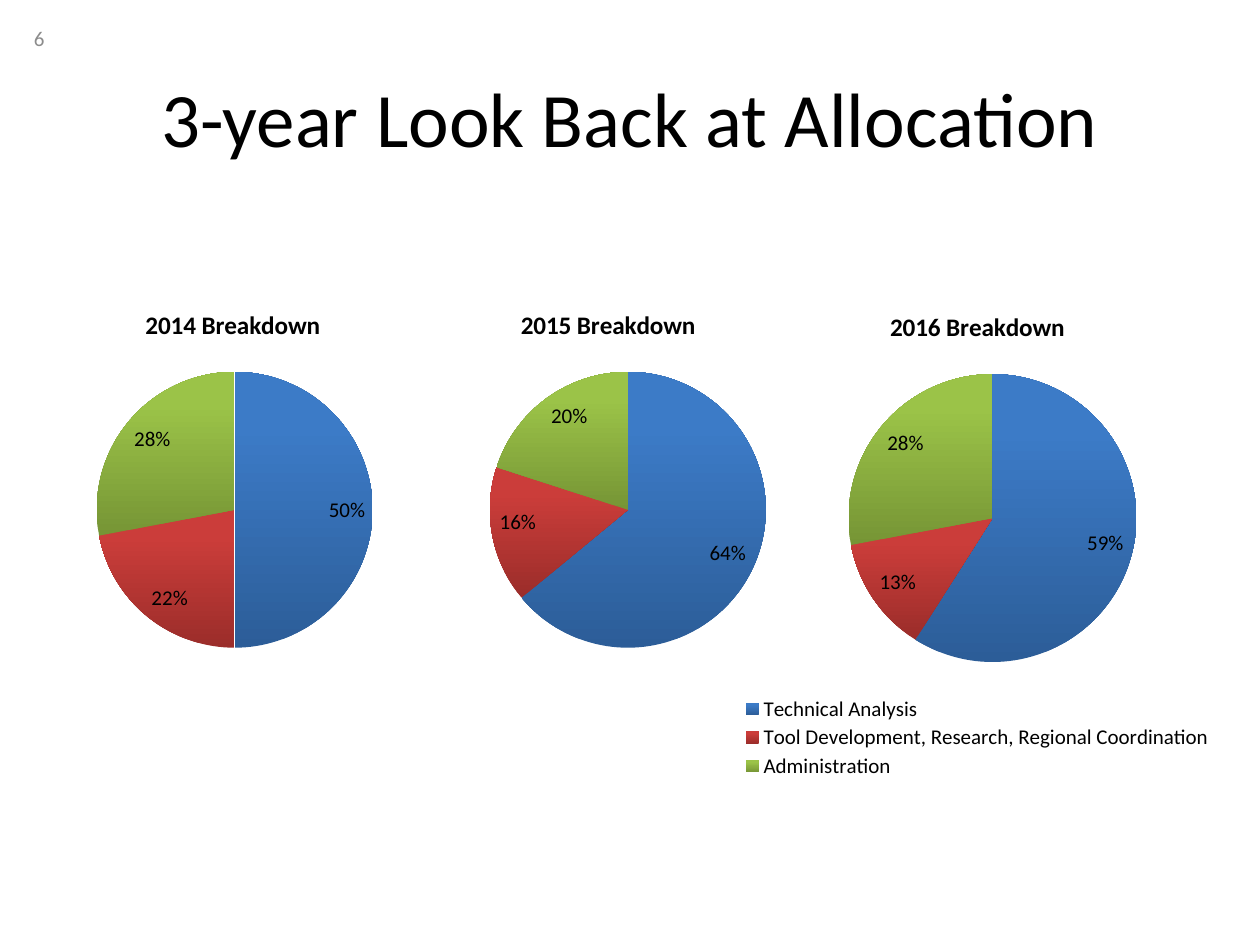
import pptx
import pptx.chart.data
import pptx.dml.color
import pptx.enum.chart
import pptx.enum.text
import pptx.oxml
import pptx.oxml.ns
import pptx.util

Pt = pptx.util.Pt
FONT = "Calibri"
# Slice gradients: bottom colour, top colour
SLICES = [("2C5D98", "3C7BC7"), ("9B2D2A", "CB3D3A"), ("769535", "9BC348")]
CATEGORIES = [
    "Technical Analysis",
    "Tool Development, Research, Regional Coordination",
    "Administration",
]
NUMBERS = ["1", "2", "3"]


def rgb(value):
    return pptx.dml.color.RGBColor.from_string(value)


def set_font(font, size, color="000000", bold=False):
    font.name = FONT
    font.size = Pt(size)
    font.bold = bold
    font.color.rgb = rgb(color)


def place(sp, box):
    sp.left, sp.top, sp.width, sp.height = [Pt(v) for v in box]


def set_text(sp, text, size, color, align):
    tf = sp.text_frame
    tf.word_wrap = True
    tf.vertical_anchor = pptx.enum.text.MSO_ANCHOR.MIDDLE
    p = tf.paragraphs[0]
    p.text = text
    p.alignment = align
    set_font(p.font, size, color)


def set_layout(parent, index, box, target=""):
    """Fix the place of a chart part, as fractions of the chart's frame."""
    for old in parent.findall(pptx.oxml.ns.qn("c:layout")):
        parent.remove(old)
    sizes = "".join(f'<c:{k} val="{v}"/>' for k, v in zip("xywh", box))
    parent.insert(index, pptx.oxml.parse_xml(
        f'<c:layout {pptx.oxml.ns.nsdecls("c")}><c:manualLayout>{target}'
        f'<c:xMode val="edge"/><c:yMode val="edge"/>{sizes}'
        '</c:manualLayout></c:layout>'))


def add_pie(slide, title, values, box, plot_box, categories=NUMBERS):
    data = pptx.chart.data.CategoryChartData(number_format="0%")
    data.categories = categories
    data.add_series("Series 1", values)
    chart = slide.shapes.add_chart(
        pptx.enum.chart.XL_CHART_TYPE.PIE, *[Pt(v) for v in box], data).chart
    set_font(chart.font, 12)
    chart.has_legend = False

    # Title
    chart.has_title = True
    p = chart.chart_title.text_frame.paragraphs[0]
    p.text = title
    set_font(p.font, 14.4, bold=True)
    chart.chart_title.include_in_layout = False

    # Slices
    plot = chart.plots[0]
    plot.vary_by_categories = True
    for i, colors in enumerate(SLICES):
        fill = plot.series[0].points[i].format.fill
        fill.gradient()
        fill.gradient_angle = 90
        for stop, color, position in zip(fill.gradient_stops, colors, (0, 0.8)):
            stop.color.rgb = rgb(color)
            stop.position = position

    # Value labels
    plot.has_data_labels = True
    labels = plot.data_labels
    labels.show_value = True
    labels.show_percentage = False
    labels.number_format = "0%"
    labels.number_format_is_linked = False
    labels.position = pptx.enum.chart.XL_LABEL_POSITION.INSIDE_END
    set_font(labels.font, 12)

    plot_area = chart.element.find(".//" + pptx.oxml.ns.qn("c:plotArea"))
    set_layout(plot_area, 0, plot_box, '<c:layoutTarget val="inner"/>')
    return chart


def add_legend(chart, box):
    chart.has_legend = True
    legend = chart.legend
    legend.position = pptx.enum.chart.XL_LEGEND_POSITION.BOTTOM
    legend.include_in_layout = False
    set_font(legend.font, 12)
    element = chart.element.find(".//" + pptx.oxml.ns.qn("c:legend"))
    set_layout(element, 1, box)


def main():
    prs = pptx.Presentation()
    prs.slide_width, prs.slide_height = Pt(720), Pt(540)
    slide = prs.slides.add_slide(prs.slide_layouts[5])

    # Title and slide number
    title = slide.shapes.title
    place(title, (36, 21.6, 648, 90))
    set_text(title, "3-year Look Back at Allocation", 44, "000000",
             pptx.enum.text.PP_ALIGN.CENTER)
    number = slide.shapes.add_textbox(Pt(12.24), Pt(7.2), Pt(168), Pt(28.8))
    set_text(number, "6", 12, "8C8C8C", pptx.enum.text.PP_ALIGN.LEFT)

    # Yearly pies; the last year carries the shared legend
    top = 165
    add_pie(slide, "2015 Breakdown", (0.64, 0.16, 0.2),
            (222, top, 251, 216), (0.23, 0.22, 0.63, 0.73))
    latest = add_pie(slide, "2016 Breakdown", (0.59, 0.13, 0.28),
                     (342, top, 433, 285), (0.33, 0.17, 0.38, 0.58), CATEGORIES)
    add_legend(latest, (0.18, 0.81, 0.64, 0.18))
    add_pie(slide, "2014 Breakdown", (0.5, 0.22, 0.28),
            (24, top, 218, 216), (0.14, 0.22, 0.73, 0.73))

    prs.save("out.pptx")


if __name__ == "__main__":
    main()
